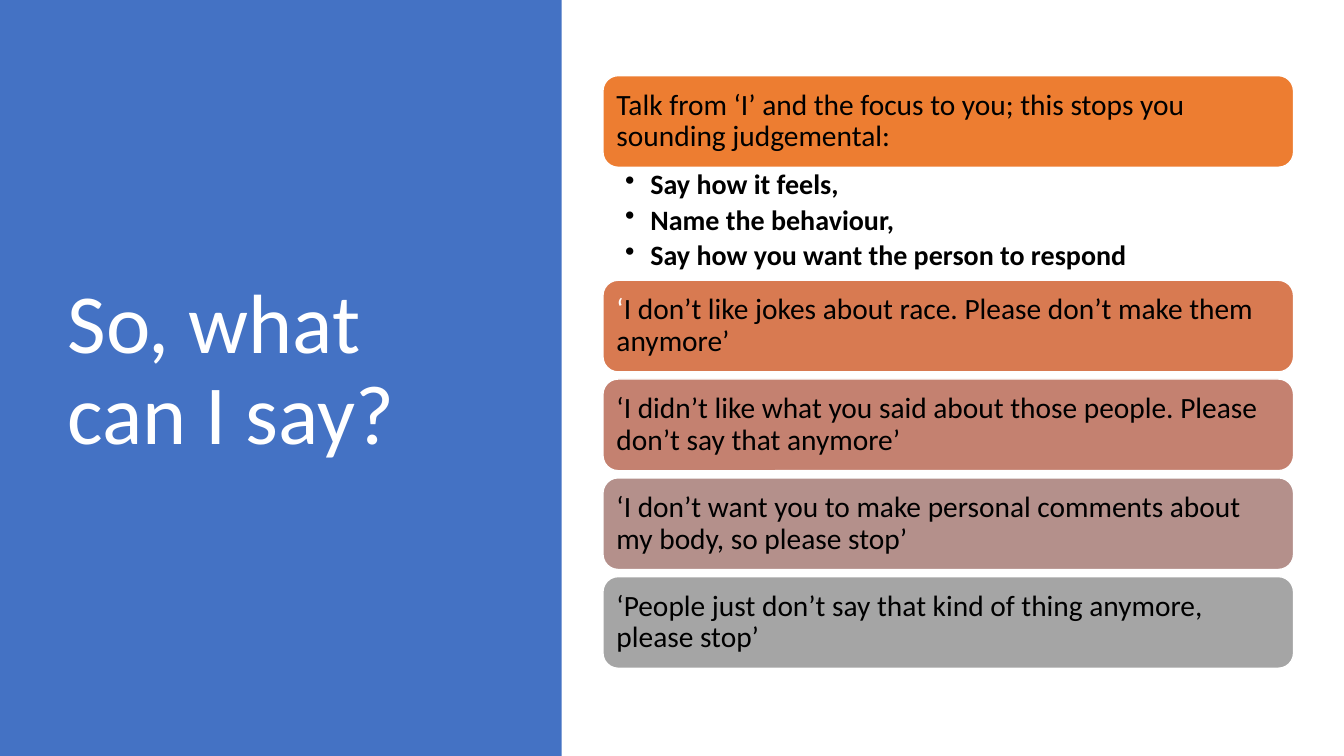
import pptx
import pptx.util
import pptx.dml.color
import pptx.enum.shapes
import pptx.enum.text
import lxml.etree
from pptx.util import Inches

COLORS = {
    "panel": "4472C4",
    "white": "FFFFFF",
    "black": "000000",
    "advice": "ED7D31",
    "jokes": "D87A51",
    "people": "C48170",
    "body": "B4908B",
    "general": "A5A5A5",
}
SHAPES = pptx.enum.shapes.MSO_SHAPE
ANCHOR = pptx.enum.text.MSO_ANCHOR
LEFT = pptx.enum.text.PP_ALIGN.LEFT


def rgb(name):
    return pptx.dml.color.RGBColor.from_string(COLORS[name])


def format_paragraph(para, size, color, bold=False):
    para.alignment = LEFT
    para.line_spacing = 0.9
    for span in para.runs:
        span.font.name = "Calibri"
        span.font.size = pptx.util.Pt(size)
        span.font.bold = bold
        span.font.color.rgb = rgb(color)


deck = pptx.Presentation()
deck.slide_width = Inches(13.33)
deck.slide_height = Inches(7.5)
page = deck.slides.add_slide(deck.slide_layouts[5])

title = page.shapes.title
title.left, title.top = Inches(0.57), Inches(0.68)
title.width, title.height = Inches(4.16), Inches(6.02)
title.text_frame.text = "So, what can I say?"
title.text_frame.word_wrap = True
title.text_frame.auto_size = pptx.enum.text.MSO_AUTO_SIZE.NONE
title.text_frame.vertical_anchor = ANCHOR.MIDDLE
format_paragraph(title.text_frame.paragraphs[0], 60, "white")

panel = page.shapes.add_shape(SHAPES.RECTANGLE, 0, 0, Inches(5.57), Inches(7.5))
panel.shadow.inherit = False
panel.fill.solid()
panel.fill.fore_color.rgb = rgb("panel")
panel.line.fill.background()
title.element.addprevious(panel.element)

card_left, card_width, card_height = 5.98, 6.85, 0.91
advice_top, quotes_top, quote_step = 0.75, 2.78, 0.98
quotes = [
    ("jokes", "‘I don’t like jokes about race. Please don’t make them anymore’"),
    ("people", "‘I didn’t like what you said about those people. Please don’t say that anymore’"),
    ("body", "‘I don’t want you to make personal comments about my body, so please stop’"),
    ("general", "‘People just don’t say that kind of thing anymore, please stop’"),
]
cards = [("advice", "Talk from ‘I’ and the focus to you; this stops you sounding judgemental:", advice_top)]
cards += [(name, words, quotes_top + row * quote_step) for row, (name, words) in enumerate(quotes)]

for name, words, top in cards:
    card = page.shapes.add_shape(
        SHAPES.ROUNDED_RECTANGLE, Inches(card_left), Inches(top), Inches(card_width), Inches(card_height)
    )
    card.shadow.inherit = False
    card.fill.solid()
    card.fill.fore_color.rgb = rgb(name)
    card.line.color.rgb = rgb("white")
    card.line.width = pptx.util.Pt(1)
    frame = card.text_frame
    frame.word_wrap = True
    frame.vertical_anchor = ANCHOR.MIDDLE
    frame.margin_left = frame.margin_right = frame.margin_top = frame.margin_bottom = Inches(0.09)
    para = frame.paragraphs[0]
    if name == "jokes":
        para.add_run().text = words[0]
        para.add_run().text = words[1:]
    else:
        para.text = words
    format_paragraph(para, 21, "black")
    if name == "jokes":
        para.runs[0].font.color.rgb = rgb("white")

box = page.shapes.add_textbox(
    Inches(card_left), Inches(advice_top + card_height), Inches(card_width), Inches(1.12)
)
frame = box.text_frame
frame.word_wrap = True
frame.margin_left, frame.margin_right = Inches(0.22), Inches(0.16)
frame.margin_top = frame.margin_bottom = Inches(0.03)
frame.text = "Say how it feels,\nName the behaviour,\nSay how you want the person to respond"
for para in frame.paragraphs:
    format_paragraph(para, 20, "black", bold=True)
    para.space_after = pptx.util.Pt(3.75)
    properties = para._p.get_or_add_pPr()
    properties.set("marL", str(Inches(0.25)))
    properties.set("indent", str(Inches(-0.25)))
    bullet = lxml.etree.SubElement(properties, pptx.oxml.ns.qn("a:buChar"))
    bullet.set("char", "•")

deck.save("out.pptx")
